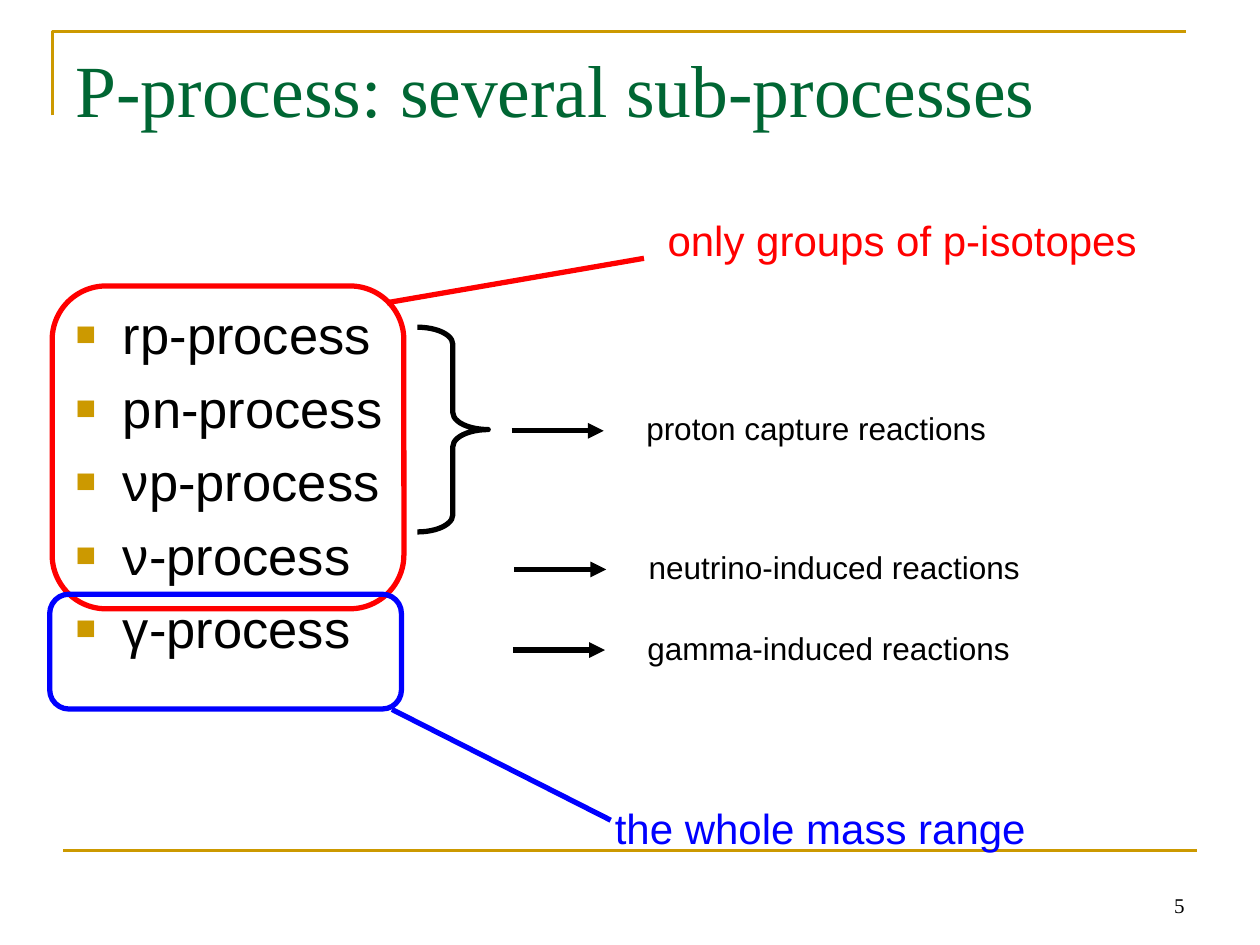
from lxml.etree import SubElement
from pptx import Presentation
from pptx.dml.color import RGBColor
from pptx.enum.shapes import MSO_CONNECTOR, MSO_SHAPE
from pptx.enum.text import MSO_ANCHOR, MSO_AUTO_SIZE, PP_ALIGN
from pptx.oxml.ns import qn
from pptx.util import Pt

COLORS = {
    "rule": "CC9900",
    "title": "006633",
    "text": "000000",
    "groups": "FF0000",
    "range": "0000FF",
}
PROCESSES = ["rp-process", "pn-process", "νp-process", "ν-process", "γ-process"]
REACTIONS = [
    ("proton capture reactions", 292.4, 246.2, 209),
    ("neutrino-induced reactions", 293.8, 325.4, 227),
    ("gamma-induced reactions", 293.1, 371.5, 222),
]


def rgb(name):
    return RGBColor.from_string(COLORS[name])


def set_attrs(obj, values):
    for name, value in values.items():
        setattr(obj, name, value)


def place(sp, box):
    set_attrs(sp, dict(zip(("left", "top", "width", "height"), map(Pt, box))))


def style_text(p, text, size, color, font="Arial"):
    r = p.add_run()
    r.text = text
    set_attrs(r.font, {"name": font, "size": Pt(size)})
    r.font.color.rgb = rgb(color)


def style_line(sp, color, width):
    sp.line.color.rgb = rgb(color)
    sp.line.width = Pt(width)


def add_text(shapes, box, text, size, color, font="Arial", **frame):
    sp = shapes.add_textbox(*map(Pt, box))
    tf = sp.text_frame
    set_attrs(tf, {"word_wrap": False, **frame})
    style_text(tf.paragraphs[0], text, size, color, font)
    return tf


def add_line(shapes, start, end, color, width=3, arrow=False):
    sp = shapes.add_connector(MSO_CONNECTOR.STRAIGHT, *map(Pt, start + end))
    style_line(sp, color, width)
    if arrow:
        SubElement(sp.line._get_or_add_ln(), qn("a:tailEnd"), type="triangle")
    SubElement(sp._element.spPr, qn("a:effectLst"))


def add_outline(shapes, kind, box, color, adjust):
    sp = shapes.add_shape(kind, *map(Pt, box))
    sp.shadow.inherit = False
    sp.fill.background()
    sp.adjustments[0] = adjust
    style_line(sp, color, 3)


def add_corner(shapes):
    builder = shapes.build_freeform(Pt(30), Pt(66))
    builder.add_line_segments([(Pt(30), Pt(18)), (Pt(678), Pt(18))], close=False)
    sp = builder.convert_to_shape()
    sp.shadow.inherit = False
    sp.fill.background()
    style_line(sp, "rule", 1.5)


def add_bullet(p):
    pPr = p._p.get_or_add_pPr()
    set_attrs(p, {"alignment": PP_ALIGN.LEFT})
    pPr.set("marL", str(Pt(27)))
    pPr.set("indent", str(Pt(-27)))
    clr = SubElement(pPr, qn("a:buClr"))
    SubElement(clr, qn("a:srgbClr"), val=COLORS["rule"])
    SubElement(pPr, qn("a:buSzPct"), val="65000")
    SubElement(pPr, qn("a:buFont"), typeface="Arial")
    SubElement(pPr, qn("a:buChar"), char="■")


def fill_title(sp):
    place(sp, (36, 21.6, 648, 90))
    tf = sp.text_frame
    set_attrs(tf, {"vertical_anchor": MSO_ANCHOR.TOP, "auto_size": MSO_AUTO_SIZE.NONE})
    p = tf.paragraphs[0]
    p.alignment = PP_ALIGN.LEFT
    style_text(p, "P-process: several sub-processes", 42, "title", "Times New Roman")


def fill_list(sp):
    place(sp, (36, 169.2, 648, 234))
    tf = sp.text_frame
    tf.auto_size = MSO_AUTO_SIZE.NONE
    for i, text in enumerate(PROCESSES):
        p = tf.add_paragraph() if i else tf.paragraphs[0]
        add_bullet(p)
        style_text(p, text, 30, "text")


def add_callout(shapes, frame, start, end, label, text, color):
    group = shapes.add_group_shape().shapes
    add_outline(group, MSO_SHAPE.ROUNDED_RECTANGLE, frame, color, 0.167)
    add_line(group, start, end, color)
    add_text(group, label, text, 24, color)


def add_reaction(shapes, text, x, y, width):
    add_line(shapes, (x, y), (x + 52.6, y), "text", arrow=True)
    add_text(shapes, (x + 69.8, y - 15.8, width, 28.8), text, 18, "text")


def main():
    prs = Presentation()
    set_attrs(prs, {"slide_width": Pt(720), "slide_height": Pt(540)})
    s = prs.slides.add_slide(prs.slide_layouts[1])
    shapes = s.shapes
    fill_title(shapes.title)
    fill_list(s.placeholders[1])

    add_corner(shapes)
    add_line(shapes, (36, 486), (684, 486), "rule", 1.5)
    tf = add_text(shapes, (516, 492, 168, 36), "5", 12, "text", "Times New Roman",
                  word_wrap=True, vertical_anchor=MSO_ANCHOR.BOTTOM)
    tf.paragraphs[0].alignment = PP_ALIGN.RIGHT

    add_outline(shapes, MSO_SHAPE.RIGHT_BRACE, (238.5, 187, 40.5, 117), "text", 0.241)
    for reaction in REACTIONS:
        add_reaction(shapes, *reaction)

    add_callout(shapes, (29.8, 163.4, 201, 184.5), (221, 173), (368, 147.6),
                (374.4, 118.8, 283, 36), "only groups of p-isotopes", "groups")
    add_callout(shapes, (28.4, 339.6, 201, 65.6), (224, 405.4), (349, 468.7),
                (344.2, 455, 250, 36), "the whole mass range", "range")
    prs.save("out.pptx")


if __name__ == "__main__":
    main()
